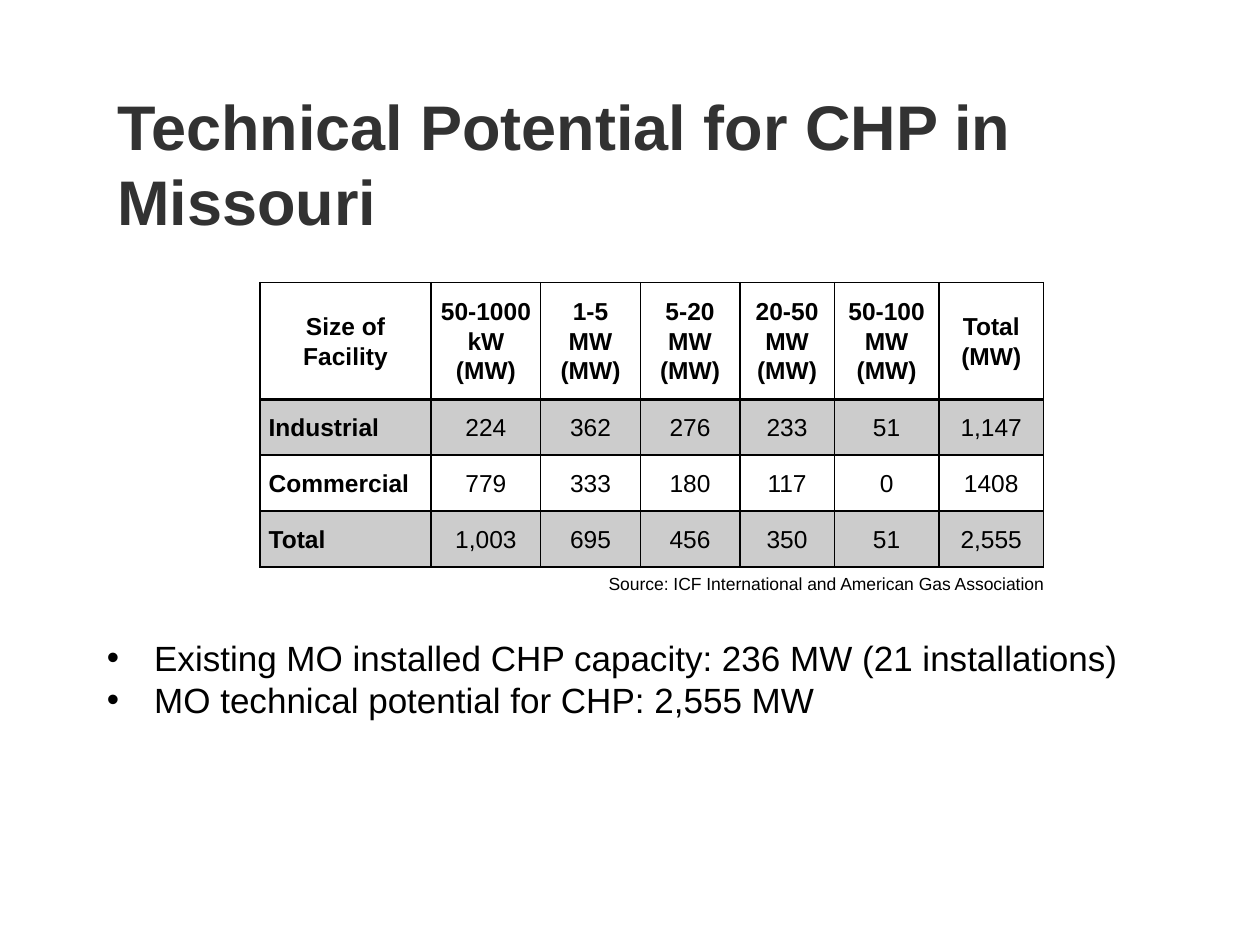
from lxml.etree import SubElement
from pptx import Presentation
from pptx.dml.color import RGBColor
from pptx.enum.text import MSO_ANCHOR as Anchor, PP_ALIGN as Align
from pptx.oxml.ns import qn
from pptx.util import Pt

BLACK = RGBColor(0x00, 0x00, 0x00)
CHARCOAL = RGBColor(0x32, 0x32, 0x32)
FONT = "Arial"

COLUMN_WIDTHS = [97.9, 62.6, 56.9, 56.9, 54, 59.8, 59.8]
ROW_HEIGHTS = [66.6, 32, 32, 32]
POTENTIAL = [
    ["Size of Facility", "50-1000 kW (MW)", "1-5 MW (MW)", "5-20 MW (MW)",
     "20-50 MW (MW)", "50-100 MW (MW)", "Total (MW)"],
    ["Industrial", "224", "362", "276", "233", "51", "1,147"],
    ["Commercial", "779", "333", "180", "117", "0", "1408"],
    ["Total", "1,003", "695", "456", "350", "51", "2,555"],
]


def write(frame, text, size=14, color=BLACK, bold=False, align=Align.LEFT,
          spacing=None, after=0, bullet_indent=None):
    frame.word_wrap = True
    for index, line in enumerate(text.split("\n")):
        para = frame.add_paragraph() if index else frame.paragraphs[0]
        para.alignment = align
        para.space_after = Pt(after)
        if spacing:
            para.line_spacing = spacing
        if bullet_indent:
            properties = para._p.get_or_add_pPr()
            properties.set("marL", str(Pt(bullet_indent)))
            properties.set("indent", str(-Pt(bullet_indent)))
            SubElement(properties, qn("a:buFont"), typeface=FONT)
            SubElement(properties, qn("a:buChar"), char="•")
        span = para.add_run()
        span.text = line
        span.font.name = FONT
        span.font.size = Pt(size)
        span.font.bold = bold
        span.font.color.rgb = color


class SlideBuilder:
    def __init__(self, deck):
        self.page = deck.slides.add_slide(deck.slide_layouts[6])
        self.border_color = BLACK
        self.band_color = BLACK
        self.band_opacity = 20

    def text(self, left, top, width, height, text, anchor=Anchor.TOP, **style):
        box = self.page.shapes.add_textbox(Pt(left), Pt(top), Pt(width), Pt(height))
        box.text_frame.vertical_anchor = anchor
        write(box.text_frame, text, **style)

    def border(self, cell, side, width):
        line = SubElement(cell._tc.get_or_add_tcPr(), qn(f"a:ln{side}"), w=str(Pt(width)))
        fill = SubElement(line, qn("a:solidFill"))
        SubElement(fill, qn("a:srgbClr"), val=str(self.border_color))

    def band(self, cell):
        cell.fill.solid()
        cell.fill.fore_color.rgb = self.band_color
        color = cell._tc.tcPr.find(f"{qn('a:solidFill')}/{qn('a:srgbClr')}")
        SubElement(color, qn("a:alpha"), val=str(self.band_opacity * 1000))

    def table(self, left, top, widths, heights, rows):
        frame = self.page.shapes.add_table(len(rows), len(widths), Pt(left), Pt(top),
                                           Pt(sum(widths)), Pt(sum(heights)))
        table = frame.table
        table.first_row = table.horz_banding = False
        for column, width in zip(table.columns, widths):
            column.width = Pt(width)
        for row, height in zip(table.rows, heights):
            row.height = Pt(height)
        for row_index, values in enumerate(rows):
            for column_index, value in enumerate(values):
                self.cell(table.cell(row_index, column_index), value, row_index, column_index)

    def cell(self, cell, value, row, column):
        header, label = row == 0, column == 0
        cell.margin_left = cell.margin_right = Pt(5)
        cell.margin_top = cell.margin_bottom = 0
        cell.vertical_anchor = Anchor.MIDDLE
        for side in "LRTB":
            heavy = (header and side == "B") or (row == 1 and side == "T")
            self.border(cell, side, 2 if heavy else 1)
        if row % 2:
            self.band(cell)
        else:
            cell.fill.background()
        write(cell.text_frame, value, bold=header or label, spacing=1.07, after=8,
              align=Align.LEFT if label and not header else Align.CENTER)


def main():
    deck = Presentation()
    deck.slide_width, deck.slide_height = Pt(720), Pt(540)
    slide = SlideBuilder(deck)
    slide.text(60, 48, 624, 90, "Technical Potential for CHP in Missouri",
               anchor=Anchor.MIDDLE, size=36, color=CHARCOAL, bold=True)
    slide.table(148.5, 161.5, COLUMN_WIDTHS, ROW_HEIGHTS, POTENTIAL)
    slide.text(264, 324, 339.4, 19.4,
               "Source: ICF International and American Gas Association",
               size=10, align=Align.RIGHT)
    slide.text(54, 360, 636.5, 55.7,
               "Existing MO installed CHP capacity: 236 MW (21 installations)\n"
               "MO technical potential for CHP: 2,555 MW",
               size=20, bullet_indent=27)
    deck.save("out.pptx")


if __name__ == "__main__":
    main()
